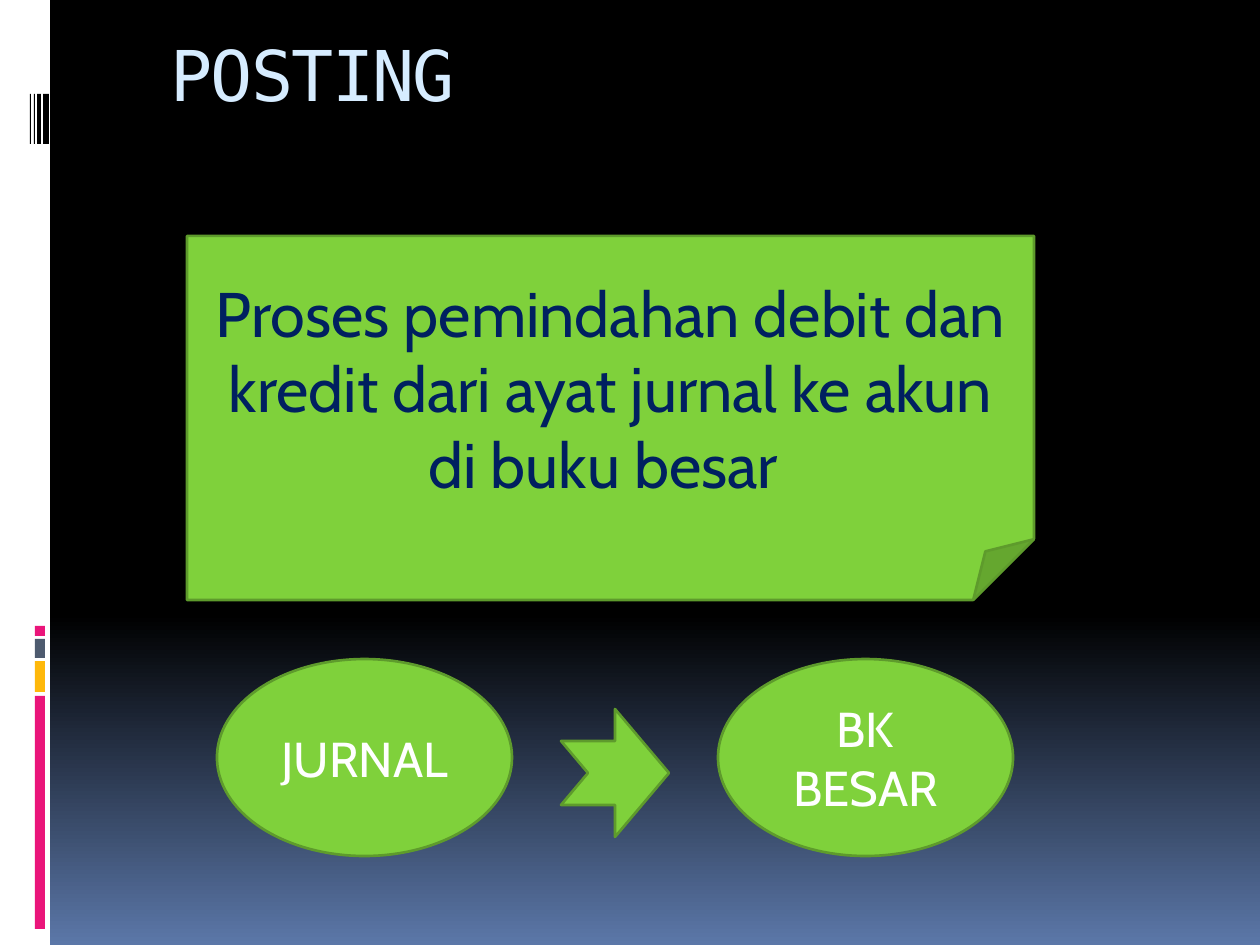
from copy import deepcopy

from pptx import Presentation
from pptx.dml.color import RGBColor
from pptx.enum.shapes import MSO_SHAPE as Shape
from pptx.enum.text import MSO_ANCHOR as Anchor, PP_ALIGN as Align
from pptx.oxml.ns import qn
from pptx.util import Emu, Pt

BLACK = RGBColor(0x00, 0x00, 0x00)
WHITE = RGBColor(0xFF, 0xFF, 0xFF)
SLATE_BLUE = RGBColor(0x5B, 0x77, 0xA8)
PINK = RGBColor(0xEA, 0x15, 0x7A)
AMBER = RGBColor(0xFE, 0xB8, 0x0A)
SLATE = RGBColor(0x4E, 0x5B, 0x6F)
PALE_BLUE = RGBColor(0xD6, 0xEC, 0xFF)
GREEN = RGBColor(0x7F, 0xD1, 0x3B)
DARK_GREEN = RGBColor(0x5E, 0x9B, 0x2C)
NAVY = RGBColor(0x00, 0x20, 0x60)


def px(value):
    return Emu(round(value * 914400 / 126))


class SlideBuilder:
    """Hold the deck style and draw elements on the current slide."""

    title_font = "DejaVu Sans Mono"
    body_font = "Cabin"

    def __init__(self, presentation):
        self.slide = presentation.slides.add_slide(presentation.slide_layouts[5])

    def background(self, top, bottom, start):
        fill = self.slide.background.fill
        fill.gradient()
        fill.gradient_angle = 270
        first, last = fill.gradient_stops
        first.color.rgb, first.position = top, 0
        last.color.rgb, last.position = bottom, 1
        stops = self.slide.element.find(".//" + qn("a:gsLst"))
        middle = deepcopy(stops[0])
        middle.set("pos", str(start * 1000))
        stops.insert(1, middle)

    def style_text(self, text_frame, font_name, size, color, align, anchor):
        text_frame.word_wrap = True
        text_frame.vertical_anchor = anchor
        paragraph = text_frame.paragraphs[0]
        paragraph.alignment = align
        run = paragraph.runs[0]
        run.font.name = font_name
        run.font.size = Pt(size)
        run.font.color.rgb = color
        return run

    def title(self, text, left, top, width, height):
        shape = self.slide.shapes.title
        shape.left, shape.top = px(left), px(top)
        shape.width, shape.height = px(width), px(height)
        text_frame = shape.text_frame
        text_frame.text = text
        text_frame.margin_top = px(11)
        run = self.style_text(text_frame, self.title_font, 40, PALE_BLUE, Align.LEFT, Anchor.TOP)
        run.font._element.set("spc", "-100")

    def bar(self, color, left, top, width, height):
        shape = self.slide.shapes.add_shape(
            Shape.RECTANGLE, px(left), px(top), px(width), px(height))
        shape.shadow.inherit = False
        shape.fill.solid()
        shape.fill.fore_color.rgb = color
        shape.line.fill.background()
        return shape

    def figure(self, kind, left, top, width, height, text="", size=28, color=WHITE):
        shape = self.slide.shapes.add_shape(kind, px(left), px(top), px(width), px(height))
        shape.shadow.inherit = False
        shape.fill.solid()
        shape.fill.fore_color.rgb = GREEN
        shape.line.color.rgb = DARK_GREEN
        shape.line.width = Pt(1.5)
        if text:
            shape.text_frame.text = text
            self.style_text(
                shape.text_frame, self.body_font, size, color, Align.CENTER, Anchor.MIDDLE)


def main():
    presentation = Presentation()
    presentation.slide_width, presentation.slide_height = px(1260), px(945)
    builder = SlideBuilder(presentation)
    builder.background(BLACK, SLATE_BLUE, 65)

    builder.bar(WHITE, 0, 0, 50, 945)
    for color, top, height in (
            (PINK, 696, 233), (AMBER, 661, 31), (SLATE, 639, 19), (PINK, 626, 10)):
        builder.bar(color, 35, top, 10, height)
    for left, width in ((43, 6), (37, 4), (34, 1), (30, 1)):
        builder.bar(BLACK, left, 94, width, 50)

    builder.title("POSTING", 158, 21, 1040, 173)
    builder.figure(
        Shape.FOLDED_CORNER, 187, 236, 847, 364,
        "Proses pemindahan debit dan kredit dari ayat jurnal ke akun di buku besar ", 36, NAVY)
    for text, left in (("JURNAL", 217), ("BK BESAR", 718)):
        builder.figure(Shape.OVAL, left, 659, 295, 197, text)
    builder.figure(Shape.NOTCHED_RIGHT_ARROW, 561, 709, 108, 128)

    presentation.save("out.pptx")


if __name__ == "__main__":
    main()
